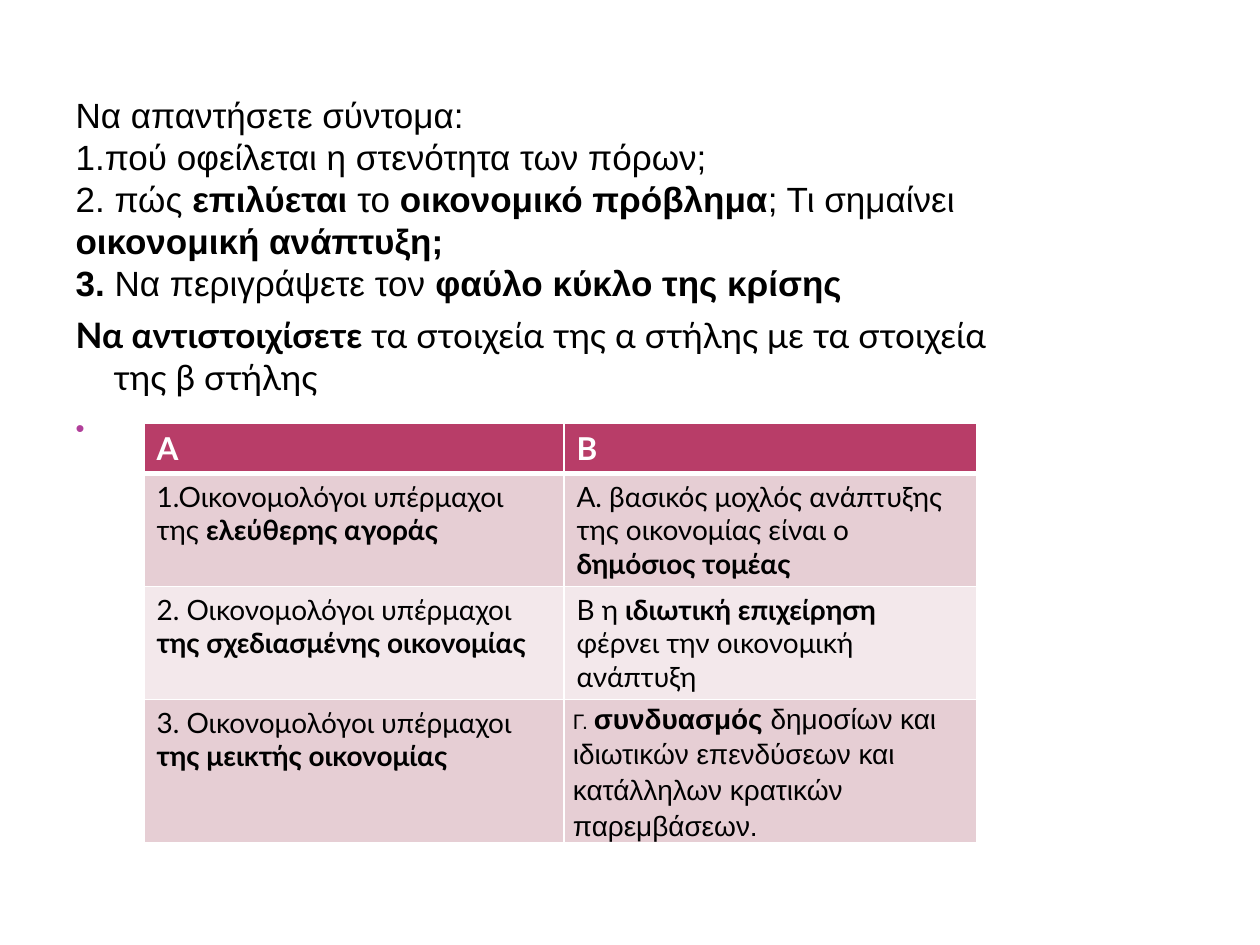
import pptx
import pptx.dml.color
import pptx.enum.text
import pptx.oxml
import pptx.oxml.ns
import pptx.util

SCALE = 914400 / 126
BLACK = pptx.dml.color.RGBColor(0x00, 0x00, 0x00)
WHITE = pptx.dml.color.RGBColor(0xFF, 0xFF, 0xFF)
HEADER = pptx.dml.color.RGBColor(0xB8, 0x3D, 0x68)
BAND_DARK = pptx.dml.color.RGBColor(0xE6, 0xCE, 0xD4)
BAND_LIGHT = pptx.dml.color.RGBColor(0xF3, 0xE8, 0xEB)
BULLET = pptx.dml.color.RGBColor(0xB1, 0x3F, 0x9A)
NS = pptx.oxml.ns.nsdecls("a")

QUESTIONS = [
    [("Να απαντήσετε σύντομα:", False)],
    [("1.πού οφείλεται η στενότητα των πόρων;", False)],
    [("2. πώς ", False), ("επιλύεται ", True), ("το ", False), ("οικονομικό πρόβλημα", True),
     ("; Τι σημαίνει ", False), ("οικονομική ανάπτυξη;", True)],
    [("3. ", True), ("Να περιγράψετε τον ", False), ("φαύλο κύκλο της κρίσης", True)],
]
MATCHING = [("Να αντιστοιχίσετε ", True),
            ("τα στοιχεία της α στήλης με τα στοιχεία της β στήλης", False)]
ROWS = [
    [[("Α", True)], [("Β", True)]],
    [[("1.Οικονομολόγοι υπέρμαχοι της ", False), ("ελεύθερης αγοράς", True)],
     [("Α. βασικός μοχλός ανάπτυξης της οικονομίας είναι ο ", False), ("δημόσιος τομέας", True)]],
    [[("2. Οικονομολόγοι υπέρμαχοι", False), (" της σχεδιασμένης οικονομίας", True)],
     [("Β η ", False), ("ιδιωτική επιχείρηση ", True), ("φέρνει την οικονομική ανάπτυξη", False)]],
    [[("3. Οικονομολόγοι υπέρμαχοι", False), (" της μεικτής οικονομίας", True)],
     [("Γ. ", False), ("συνδυασμός ", True),
      ("δημοσίων και ιδιωτικών επενδύσεων και κατάλληλων κρατικών παρεμβάσεων.", False)]],
]
COLUMN_WIDTHS = [420, 413]
ROW_HEIGHTS = [50, 113, 113, 142]


def px(n):
    """Turn pixels into EMU."""
    return pptx.util.Emu(round(n * SCALE))


def write(p, runs, size=20, font="Lato", color=BLACK, before=0, spacing=1.0):
    """Fill a paragraph with (text, bold) runs in one format."""
    p.space_before = pptx.util.Pt(before)
    p.line_spacing = spacing
    for text, bold in runs:
        r = p.add_run()
        r.text = text
        r.font.size = pptx.util.Pt(size)
        r.font.name = font
        r.font.bold = bold
        r.font.color.rgb = color


def set_bullet(p, hanging=0, char=None):
    """Set the hanging indent and the bullet of a paragraph."""
    pPr = p._p.get_or_add_pPr()
    pPr.set("marL", str(px(hanging)))
    pPr.set("indent", str(-px(hanging)))
    parts = ["<a:buNone %s/>"]
    if char:
        parts = [f'<a:buClr %s><a:srgbClr val="{BULLET}"/></a:buClr>', '<a:buSzPct %s val="73000"/>',
                 '<a:buFont %s typeface="Arial"/>', f'<a:buChar %s char="{char}"/>']
    for part in parts:
        pPr.append(pptx.oxml.parse_xml(part % NS))


def add_questions(slide):
    """Write the questions in the body placeholder."""
    slide.shapes.title.element.getparent().remove(slide.shapes.title.element)
    sp = slide.placeholders[1]
    sp.left, sp.top, sp.width, sp.height = px(63), px(45), px(998), px(844)
    tf = sp.text_frame
    tf.word_wrap = True
    tf.auto_size = pptx.enum.text.MSO_AUTO_SIZE.NONE
    tf.vertical_anchor = pptx.enum.text.MSO_ANCHOR.TOP
    tf.margin_top = px(48)
    for i, runs in enumerate(QUESTIONS):
        p = tf.add_paragraph() if i else tf.paragraphs[0]
        set_bullet(p)
        write(p, runs, font="Arial", spacing=pptx.util.Pt(24))
    for runs, char in ((MATCHING, None), ([("\u00a0", True)], "•")):
        p = tf.add_paragraph()
        set_bullet(p, hanging=38, char=char)
        write(p, runs, before=6)


def set_borders(cell, bottom):
    """Draw white cell borders, with the bottom width in points."""
    tcPr = cell._tc.get_or_add_tcPr()
    for side, width in (("L", 1), ("R", 1), ("T", 1), ("B", bottom)):
        tcPr.append(pptx.oxml.parse_xml(
            f'<a:ln{side} {NS} w="{pptx.util.Pt(width)}"><a:solidFill>'
            f'<a:srgbClr val="{WHITE}"/></a:solidFill></a:ln{side}>'))


def add_matching_table(slide):
    """Add the two columns to be matched."""
    frame = slide.shapes.add_table(len(ROWS), 2, px(144), px(423),
                                   px(sum(COLUMN_WIDTHS)), px(sum(ROW_HEIGHTS)))
    table = frame.table
    for column, width in zip(table.columns, COLUMN_WIDTHS):
        column.width = px(width)
    for i, (row, height) in enumerate(zip(ROWS, ROW_HEIGHTS)):
        table.rows[i].height = px(height)
        for j, runs in enumerate(row):
            cell = table.cell(i, j)
            set_borders(cell, 1 if i else 3)
            cell.fill.solid()
            cell.fill.fore_color.rgb = (BAND_DARK if i % 2 else BAND_LIGHT) if i else HEADER
            p = cell.text_frame.paragraphs[0]
            if i == 0:
                write(p, runs, size=18, color=WHITE)
            elif (i, j) == (3, 1):
                cell.margin_left = cell.margin_right = px(9)
                cell.margin_top = cell.margin_bottom = 0
                write(p, runs, size=16, font="Arial", spacing=1.15)
                p.runs[0].font.size = pptx.util.Pt(12)
            else:
                write(p, runs, size=16)


def main():
    """Build and save the slide."""
    prs = pptx.Presentation()
    prs.slide_width, prs.slide_height = px(1260), px(945)
    slide = prs.slides.add_slide(prs.slide_layouts[1])
    add_questions(slide)
    add_matching_table(slide)
    prs.save("out.pptx")


if __name__ == "__main__":
    main()
